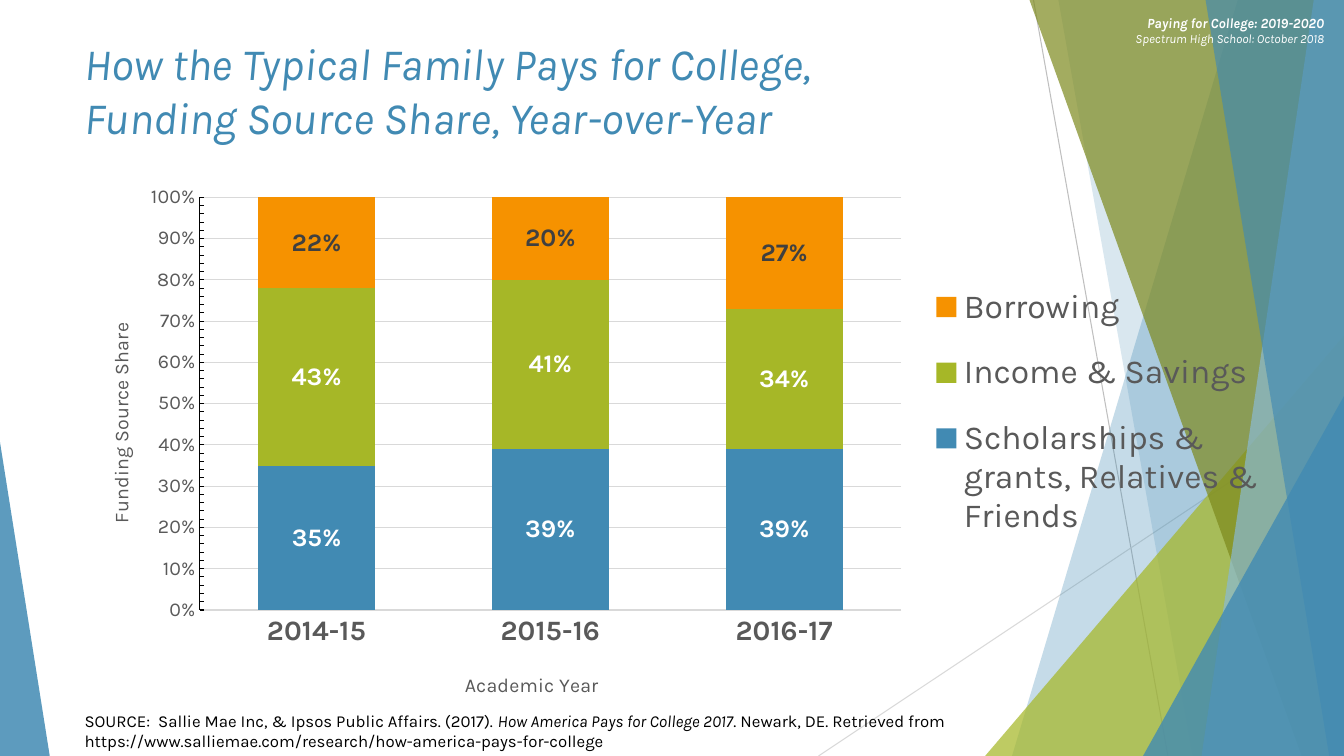
from dataclasses import dataclass

from lxml import etree
from pptx import Presentation
from pptx.chart.data import CategoryChartData
from pptx.dml.color import RGBColor
from pptx.enum.chart import XL_CHART_TYPE, XL_LEGEND_POSITION, XL_TICK_MARK
from pptx.enum.shapes import MSO_CONNECTOR, MSO_SHAPE
from pptx.enum.text import MSO_ANCHOR, PP_ALIGN
from pptx.oxml.ns import qn
from pptx.util import Inches, Pt

STACKED = XL_CHART_TYPE.COLUMN_STACKED
LEGEND_RIGHT = XL_LEGEND_POSITION.RIGHT
TICK_NONE, TICK_INSIDE = XL_TICK_MARK.NONE, XL_TICK_MARK.INSIDE
STRAIGHT = MSO_CONNECTOR.STRAIGHT
TRIANGLE = MSO_SHAPE.ISOSCELES_TRIANGLE
TOP = MSO_ANCHOR.TOP
LEFT, RIGHT = PP_ALIGN.LEFT, PP_ALIGN.RIGHT

SLIDE_W, SLIDE_H = Inches(13.33), Inches(7.5)


@dataclass(frozen=True)
class Theme:
    font: str = "Karla"
    blue: str = "418AB3"
    pale_blue: str = "8ABAD4"
    green: str = "A6B727"
    olive: str = "7D891D"
    orange: str = "F69200"
    white: str = "FFFFFF"
    black: str = "000000"
    dark: str = "404040"
    gray: str = "595959"
    rule: str = "D9D9D9"
    dark_rule: str = "BFBFBF"
    title: int = 32
    legend: int = 24
    category: int = 20
    label: int = 18
    axis: int = 14
    source: int = 12
    header: int = 10
    subheader: int = 9
    hairline: float = 0.75


THEME = Theme()

YEARS = ["2014-15", "2015-16", "2016-17"]
FUNDING = [  # name, shares, column colour, label colour
    ("Scholarships & grants, Relatives & Friends", (0.35, 0.39, 0.39), THEME.blue, THEME.white),
    ("Income & Savings", (0.43, 0.41, 0.34), THEME.green, THEME.white),
    ("Borrowing", (0.22, 0.20, 0.27), THEME.orange, THEME.dark),
]


def across(percent):
    return round(SLIDE_W * percent / 100)


def down(percent):
    return round(SLIDE_H * percent / 100)


def place(left, top, width, height):
    return across(left), down(top), across(width), down(height)


def style_font(font, color, **format_values):
    for name, value in {"name": THEME.font, **format_values}.items():
        setattr(font, name, value)
    font.color.rgb = RGBColor.from_string(color)


def style_line(line, color):
    line.color.rgb = RGBColor.from_string(color)
    line.width = Pt(THEME.hairline)


# Background facets
def tint(shape, color, opacity):
    shape.shadow.inherit = False
    shape.line.fill.background()
    shape.fill.solid()
    shape.fill.fore_color.rgb = RGBColor.from_string(color)
    color_node = shape.fill._xPr.find(qn("a:solidFill"))[0]
    etree.SubElement(color_node, qn("a:alpha"), val=str(opacity * 1000))


def add_facet(slide, top_left, bottom_left, color, opacity):
    """Full-height band from a slanted left edge to the right slide edge."""
    builder = slide.shapes.build_freeform(across(top_left), 0)
    builder.add_line_segments([
        (SLIDE_W, 0), (SLIDE_W, SLIDE_H), (across(bottom_left), SLIDE_H)], close=True)
    tint(builder.convert_to_shape(), color, opacity)


def add_corner(slide, left, top, width, apex, color, opacity):
    """Triangle standing on the bottom edge of the slide."""
    corner = slide.shapes.add_shape(TRIANGLE, *place(left, top, width, 100 - top))
    corner.adjustments[0] = apex
    tint(corner, color, opacity)


def add_ray(slide, start, end, color):
    ray = slide.shapes.add_connector(
        STRAIGHT, across(start[0]), down(start[1]), across(end[0]), down(end[1]))
    style_line(ray.line, color)
    etree.SubElement(ray._element.spPr, qn("a:effectLst"))


def add_background(slide):
    add_ray(slide, (76.9, 0), (86.9, 100), THEME.dark_rule)
    add_ray(slide, (100, 53.7), (60.9, 100), THEME.rule)
    add_facet(slide, 92.1, 75.3, THEME.blue, 30)
    add_facet(slide, 78.75, 88.75, THEME.blue, 20)
    add_corner(slide, 73.3, 44.4, 26.7, 1, THEME.green, 72)
    add_facet(slide, 76.6, 96.85, THEME.olive, 70)
    add_facet(slide, 97.75, 89.4, THEME.pale_blue, 70)
    add_facet(slide, 89.7, 98.9, THEME.blue, 65)
    add_corner(slide, 85.05, 52.4, 14.95, 1, THEME.blue, 80)
    add_corner(slide, 0, 58.5, 3.7, 0, THEME.blue, 85)


# Text
def add_text(slide, box, paragraphs, color, align):
    """Each paragraph is a list of (text, format values) runs."""
    frame = slide.shapes.add_textbox(*place(*box)).text_frame
    frame.word_wrap = True
    for index, runs in enumerate(paragraphs):
        paragraph = frame.add_paragraph() if index else frame.paragraphs[0]
        paragraph.alignment = align
        for text, format_values in runs:
            run = paragraph.add_run()
            run.text = text
            style_font(run.font, color, **format_values)


def set_title(slide, text):
    title = slide.shapes.title
    title.left, title.top, title.width, title.height = place(5.55, 4.1, 70.5, 19.2)
    frame = title.text_frame
    frame.text = text
    frame.word_wrap = True
    frame.vertical_anchor = TOP
    heading = frame.paragraphs[0]
    heading.alignment = LEFT
    for run in heading.runs:
        style_font(run.font, THEME.blue, size=Pt(THEME.title), italic=True)


# Chart
def set_layout(parent, before, inner=False, **shares):
    """Fix a chart part at shares of the chart area."""
    for old in parent.findall(qn("c:layout")):
        parent.remove(old)
    layout = etree.Element(qn("c:layout"))
    manual = etree.SubElement(layout, qn("c:manualLayout"))
    if inner:
        etree.SubElement(manual, qn("c:layoutTarget"), val="inner")
    for side in ("xMode", "yMode"):
        etree.SubElement(manual, qn(f"c:{side}"), val="edge")
    for side, share in shares.items():
        etree.SubElement(manual, qn(f"c:{side}"), val=str(share))
    parent.find(qn(before)).addprevious(layout)


def style_axis(axis, title, corner, tick_size, bold, line_color):
    axis.major_tick_mark = axis.minor_tick_mark = TICK_NONE
    style_font(axis.tick_labels.font, THEME.gray, size=Pt(tick_size), bold=bold)
    style_line(axis.format.line, line_color)
    frame = axis.axis_title.text_frame
    frame.text = title
    style_font(frame.paragraphs[0].runs[0].font, THEME.gray, size=Pt(THEME.axis), bold=False)
    set_layout(axis.axis_title._element, "c:overlay", x=corner[0], y=corner[1])


def add_funding_chart(slide):
    data = CategoryChartData(number_format="0%")
    data.categories = YEARS
    for name, shares, _, _ in FUNDING:
        data.add_series(name, shares)
    chart = slide.shapes.add_chart(STACKED, *place(6.9, 23.3, 88.45, 70), data).chart
    chart.has_title = False
    style_font(chart.font, THEME.black, size=Pt(THEME.header))

    plot = chart.plots[0]
    plot.gap_width, plot.overlap, plot.vary_by_categories = 100, 100, False
    for series, (_, _, color, label_color) in zip(plot.series, FUNDING):
        series.invert_if_negative = False
        series.format.fill.solid()
        series.format.fill.fore_color.rgb = RGBColor.from_string(color)
        labels = series.data_labels
        labels.show_value = True
        labels.number_format, labels.number_format_is_linked = "0%", False
        style_font(labels.font, label_color, size=Pt(THEME.label), bold=True)

    style_axis(chart.category_axis, "Academic Year", (0.31, 0.93),
               THEME.category, True, THEME.rule)
    shares_axis = chart.value_axis
    style_axis(shares_axis, "Funding Source Share", (0.01, 0.27),
               THEME.axis, False, THEME.black)
    scale = {"minimum_scale": 0, "maximum_scale": 1, "major_unit": 0.1,
             "minor_unit": 0.02, "minor_tick_mark": TICK_INSIDE}
    for name, value in scale.items():
        setattr(shares_axis, name, value)
    style_line(shares_axis.major_gridlines.format.line, THEME.rule)

    chart.has_legend = True
    legend = chart.legend
    legend.position, legend.include_in_layout = LEGEND_RIGHT, False
    style_font(legend.font, THEME.gray, size=Pt(THEME.legend))
    set_layout(legend._element, "c:overlay", x=0.7, y=0.16, w=0.29, h=0.57)
    set_layout(plot._element.getparent(), "c:barChart", inner=True,
               x=0.09, y=0.04, w=0.59, h=0.78)


def main():
    deck = Presentation()
    deck.slide_width, deck.slide_height = SLIDE_W, SLIDE_H
    slide = deck.slides.add_slide(deck.slide_layouts[5])
    add_background(slide)
    add_text(slide, (77.95, 1.2, 21.3, 5.6), [
        [("Paying for College: 2019-2020",
          {"size": Pt(THEME.header), "bold": True, "italic": True})],
        [("Spectrum High School: October 2018",
          {"size": Pt(THEME.subheader), "italic": True})],
    ], THEME.white, RIGHT)
    set_title(slide, "How the Typical Family Pays for College,\v"
                     "Funding Source Share, Year-over-Year")
    add_funding_chart(slide)
    plain = {"size": Pt(THEME.source)}
    add_text(slide, (5.55, 93.3, 74.4, 6.7), [[
        ("SOURCE:  Sallie Mae Inc, & Ipsos Public Affairs. (2017). ", plain),
        ("How America Pays for College 2017", {**plain, "italic": True}),
        (". Newark, DE. Retrieved from "
         "https://www.salliemae.com/research/how-america-pays-for-college", plain),
    ]], THEME.black, LEFT)
    deck.save("out.pptx")


if __name__ == "__main__":
    main()
